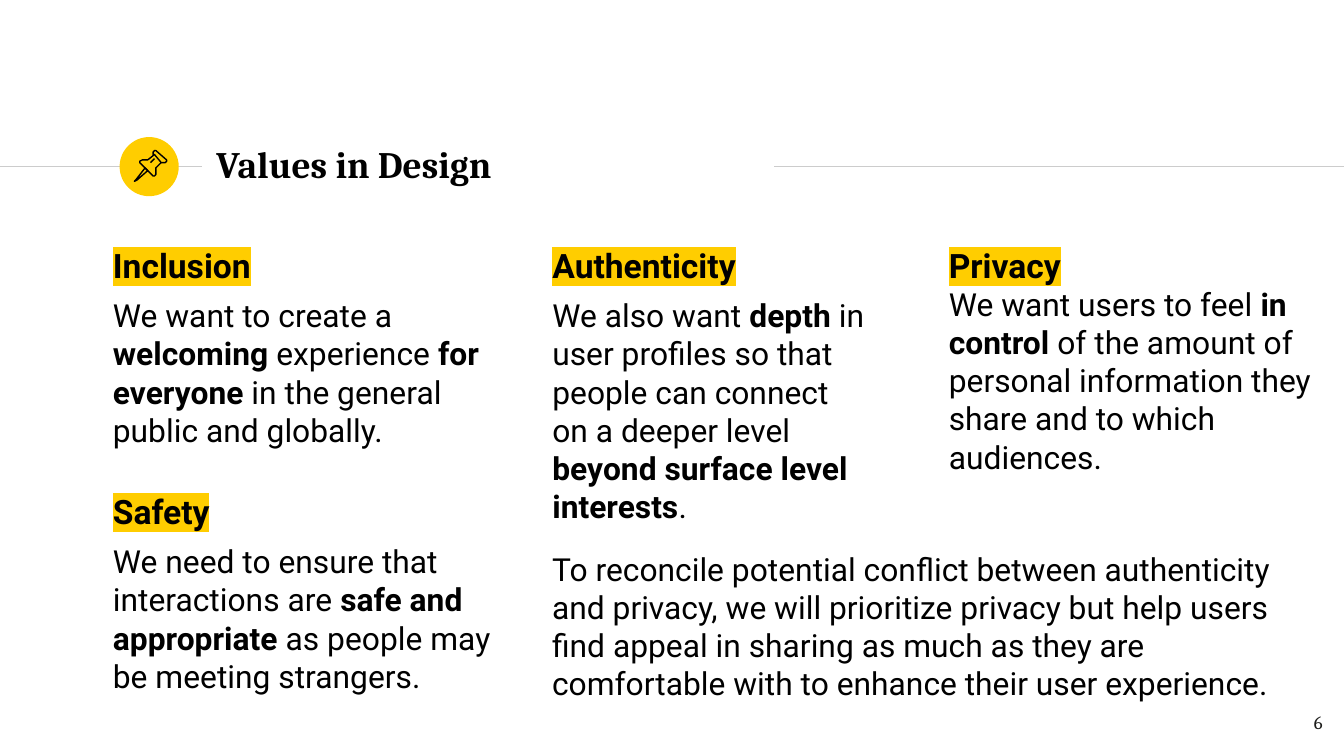
import pptx
import pptx.util
import pptx.dml.color
import pptx.enum.shapes
import pptx.enum.text
import pptx.oxml
import pptx.oxml.ns

Inches = pptx.util.Inches
Pt = pptx.util.Pt
RGBColor = pptx.dml.color.RGBColor
Align = pptx.enum.text.PP_ALIGN
Anchor = pptx.enum.text.MSO_ANCHOR
Shape = pptx.enum.shapes.MSO_SHAPE

BLACK = RGBColor(0, 0, 0)
INK = RGBColor(0x1D, 0x1D, 0x1B)
GOLD = RGBColor(0xFF, 0xCD, 0x00)
GREY = RGBColor(0xCC, 0xCC, 0xCC)

VALUES = [
    ("Inclusion", "We want to create a *welcoming* experience *for everyone* in the "
     "general public and globally.", (0.74, 1.72, 3.09, 1.79), 6),
    ("Authenticity", "We also want *depth* in user profiles so that people can connect "
     "on a deeper level *beyond surface level interests*.", (4.01, 1.72, 2.55, 2.12), 6),
    ("Privacy", "We want users to feel *in control* of the amount of personal "
     "information they share and to which audiences.", (6.96, 1.72, 2.93, 2.12), 0),
    ("Safety", "We need to ensure that interactions are *safe and appropriate* as "
     "people may be meeting strangers.", (0.74, 3.55, 3.03, 1.79), 6),
]
NOTE = ("To reconcile potential conflict between authenticity and privacy, we will "
        "prioritize privacy but help users find appeal in sharing as much as they are "
        "comfortable with to enhance their user experience.")

NEEDLE = [(108, 125), (101, 134), (100, 135), (102, 134), (110, 127), (108, 125)]
CAP = [(115, 115), (120, 121), (122, 121), (123, 121), (124, 120), (124, 119),
       (116, 112), (115, 112), (114, 113), (114, 115), (115, 115)]
BODY = [(115, 115), (110, 119), (108, 119), (106, 119), (104, 120), (104, 121),
        (114, 131), (115, 131), (116, 130), (116, 128), (116, 125), (120, 121)]
SHINE = [(112, 121), (115, 118)]


def place(item, box):
    """Move an item to a box given in inches."""
    item.left, item.top, item.width, item.height = map(Inches, box)


def setup(item, anchor=Anchor.TOP):
    """Prepare the text frame of an item and return it."""
    frame = item.text_frame
    frame.word_wrap = True
    frame.auto_size = pptx.enum.text.MSO_AUTO_SIZE.NONE
    frame.vertical_anchor = anchor
    frame.margin_left = frame.margin_right = Inches(0.1)
    frame.margin_top = frame.margin_bottom = Inches(0.1)
    return frame


def style(run, size, name="Roboto", bold=False, color=BLACK):
    """Set the font of a run."""
    font = run.font
    font.size, font.name, font.bold = Pt(size), name, bold
    font.color.rgb = color


def mark(run, color):
    """Highlight a run."""
    fill = run.font._element.find(pptx.oxml.ns.qn("a:solidFill"))
    fill.addnext(pptx.oxml.parse_xml(
        f'<a:highlight {pptx.oxml.ns.nsdecls("a")}>'
        f'<a:srgbClr val="{color}"/></a:highlight>'))


def flush(para, gap):
    """Remove bullet and indent and set the space before."""
    para.alignment = Align.LEFT
    para.space_before = Pt(gap)
    props = para._p.get_or_add_pPr()
    props.set("marL", "0")
    props.set("indent", "0")
    props.append(pptx.oxml.parse_xml(
        f'<a:buNone {pptx.oxml.ns.nsdecls("a")}/>'))


def add_value(holder, head, text, box, gap):
    """Fill a body placeholder with a marked heading and its text."""
    place(holder, box)
    frame = setup(holder)
    frame.text = head
    first = frame.paragraphs[0]
    flush(first, 6)
    style(first.runs[0], 18, bold=True)
    mark(first.runs[0], GOLD)
    para = frame.add_paragraph()
    flush(para, gap)
    for spot, part in enumerate(text.split("*")):
        run = para.add_run()
        run.text = part
        style(run, 17, bold=spot % 2 == 1)


def add_text(slide, text, box, size, name="Roboto", color=BLACK, align=Align.LEFT):
    """Add a text box with one paragraph."""
    item = slide.shapes.add_textbox(*map(Inches, box))
    frame = setup(item)
    frame.text = text
    para = frame.paragraphs[0]
    para.alignment = align
    style(para.runs[0], size, name, color=color)


def add_rule(slide, start, end):
    """Add a thin grey level line."""
    high = Inches(1.24)
    rule = slide.shapes.add_connector(
        pptx.enum.shapes.MSO_CONNECTOR.STRAIGHT, Inches(start), high, Inches(end), high)
    rule.line.color.rgb = GREY
    rule.line.width = Pt(0.75)
    rule._element.spPr.append(pptx.oxml.parse_xml(
        f'<a:effectLst {pptx.oxml.ns.nsdecls("a")}/>'))


def add_disc(slide):
    """Add the gold disc behind the pin."""
    disc = slide.shapes.add_shape(Shape.OVAL, *map(Inches, (0.89, 1.02, 0.44, 0.44)))
    disc.shadow.inherit = False
    disc.fill.solid()
    disc.fill.fore_color.rgb = GOLD
    disc.line.fill.background()


def add_stroke(slide, points):
    """Add one outline of the pin from points in hundredths of an inch."""
    pen = slide.shapes.build_freeform(*points[0], scale=Inches(0.01))
    pen.add_line_segments(points[1:], close=points[0] == points[-1])
    item = pen.convert_to_shape()
    item.shadow.inherit = False
    item.fill.background()
    item.line.color.rgb = BLACK
    item.line.width = Pt(0.75)


def add_title(slide, text):
    """Fill the title placeholder."""
    title = slide.shapes.title
    place(title, (1.51, 0.98, 4.24, 0.48))
    frame = setup(title, Anchor.MIDDLE)
    frame.text = text
    frame.paragraphs[0].alignment = Align.LEFT
    style(frame.paragraphs[0].runs[0], 20, "Cambria", True)


def main():
    """Build the slide and save it."""
    deck = pptx.Presentation()
    deck.slide_width, deck.slide_height = Inches(10), Inches(10 * 9 / 16)
    slide = deck.slides.add_slide(deck.slide_layouts.get_by_name("Comparison"))
    add_rule(slide, 0, 1.5)
    add_disc(slide)
    add_rule(slide, 5.76, 10)
    add_title(slide, "Values in Design")
    bodies = list(slide.placeholders)[1:]
    for holder, value in zip(bodies, VALUES):
        add_value(holder, *value)
    for points in (NEEDLE, CAP, BODY, SHINE):
        add_stroke(slide, points)
    add_text(slide, "6", (9.34, 5.19, 0.6, 0.43), 10, "Cambria", INK, Align.RIGHT)
    add_text(slide, NOTE, (4.01, 3.99, 5.57, 1.35), 17)
    deck.save("out.pptx")


if __name__ == "__main__":
    main()
